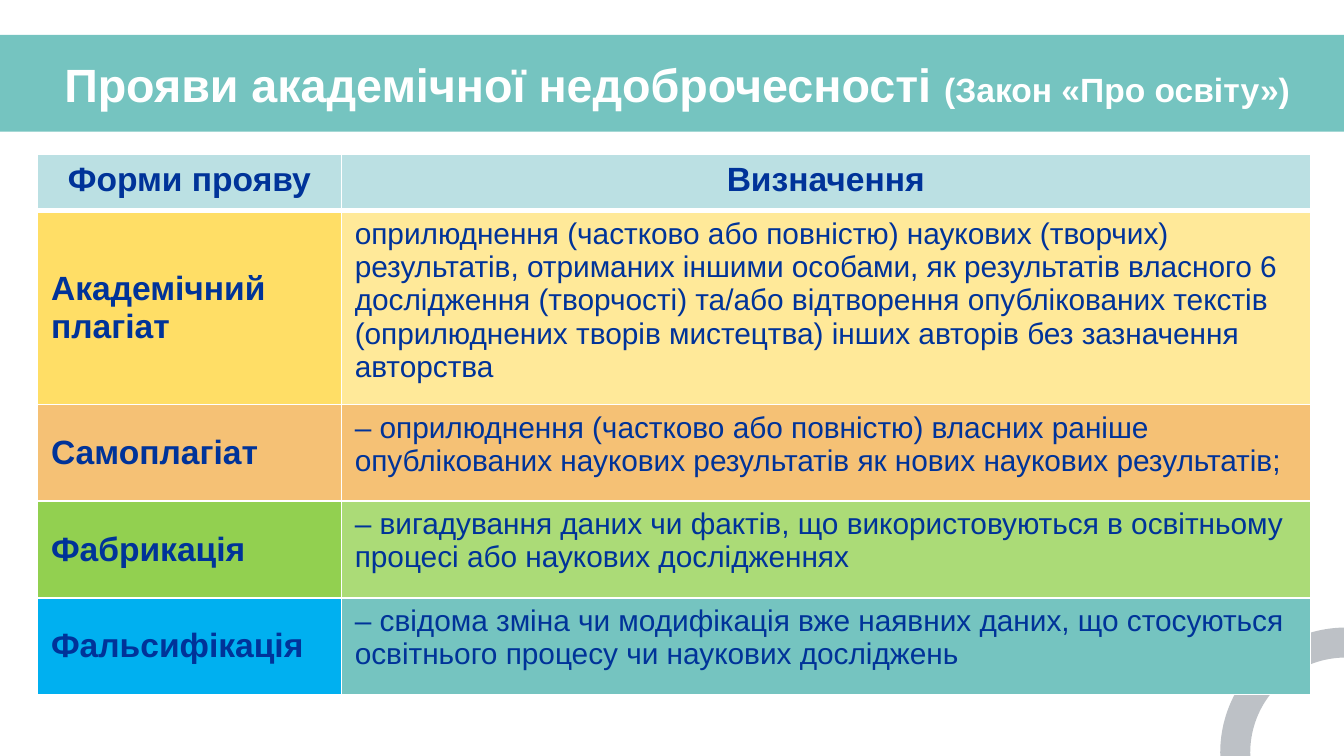
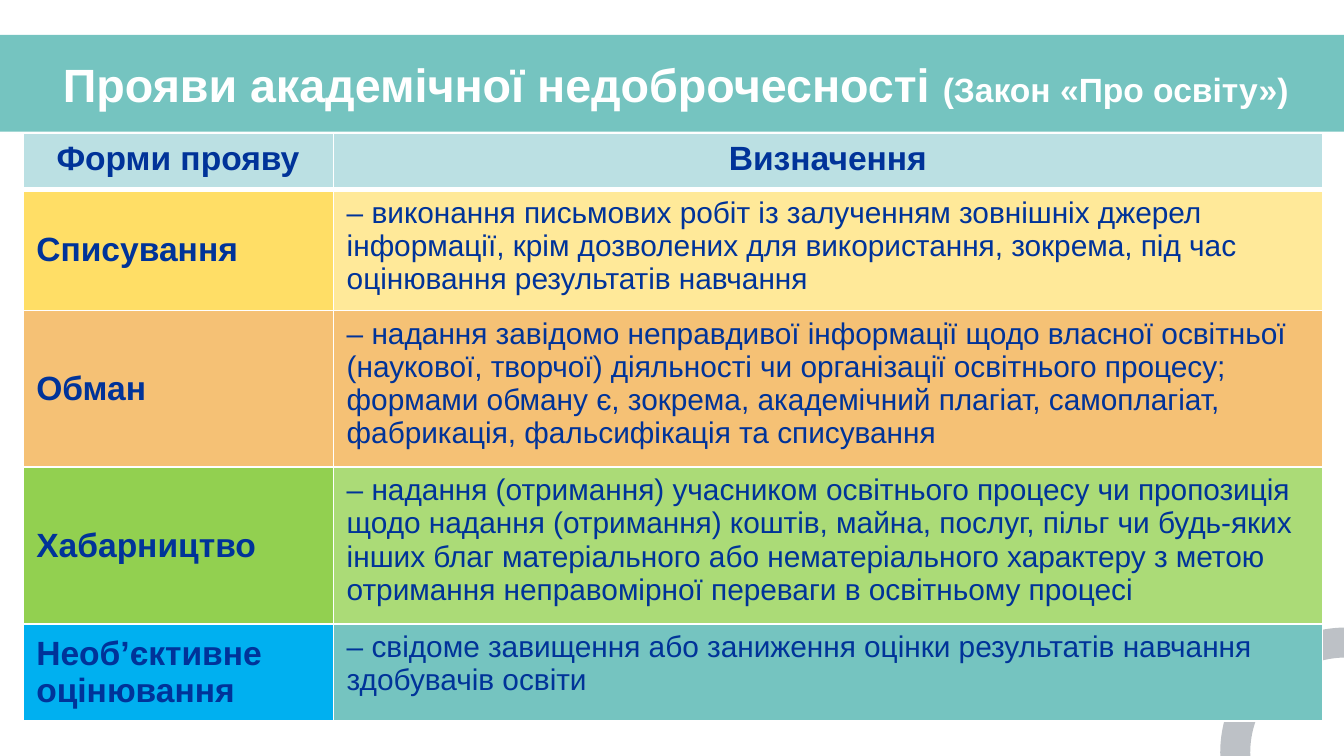
import pptx
import pptx.dml.color
import pptx.enum.shapes
import pptx.enum.text
import pptx.oxml.ns
import pptx.util
from lxml import etree

Pt = pptx.util.Pt
RGBColor = pptx.dml.color.RGBColor
Shape = pptx.enum.shapes.MSO_SHAPE
Anchor = pptx.enum.text.MSO_ANCHOR
Align = pptx.enum.text.PP_ALIGN

WHITE = RGBColor(0xFF, 0xFF, 0xFF)
NAVY = RGBColor(0x00, 0x33, 0x99)
TEAL = RGBColor(0x75, 0xC4, 0xC0)
GREY = RGBColor(0xBD, 0xC1, 0xC6)
PALE_BLUE = RGBColor(0xBB, 0xE0, 0xE3)
YELLOW = RGBColor(0xFF, 0xDE, 0x66)
PALE_YELLOW = RGBColor(0xFF, 0xE9, 0x99)
ORANGE = RGBColor(0xF5, 0xC1, 0x75)
GREEN = RGBColor(0x92, 0xD0, 0x50)
PALE_GREEN = RGBColor(0xAB, 0xDB, 0x77)
BLUE = RGBColor(0x00, 0xB0, 0xF0)

FONT = "Arial"
ROW_FILLS = [(YELLOW, PALE_YELLOW), (ORANGE, ORANGE),
             (GREEN, PALE_GREEN), (BLUE, TEAL)]
HEADINGS = ("Форми прояву", "Визначення")
HEADING_HEIGHT = 30.24
ROW_HEIGHT = 51.84
THIN, THICK = 1, 3

MISCONDUCT = [
    ("Академічний плагіат",
     "оприлюднення (частково або повністю) наукових (творчих) результатів, "
     "отриманих іншими особами, як результатів власного 6 дослідження "
     "(творчості) та/або відтворення опублікованих текстів (оприлюднених "
     "творів мистецтва) інших авторів без зазначення авторства"),
    ("Самоплагіат",
     "– оприлюднення (частково або повністю) власних раніше опублікованих "
     "наукових результатів як нових наукових результатів;"),
    ("Фабрикація",
     "– вигадування даних чи фактів, що використовуються в освітньому "
     "процесі або наукових дослідженнях"),
    ("Фальсифікація",
     "– свідома зміна чи модифікація вже наявних даних, що стосуються "
     "освітнього процесу чи наукових досліджень"),
]
MORE_MISCONDUCT = [
    ("Списування",
     "– виконання письмових робіт із залученням зовнішніх джерел "
     "інформації, крім дозволених для використання, зокрема, під час "
     "оцінювання результатів навчання"),
    ("Обман",
     "– надання завідомо неправдивої інформації щодо власної освітньої "
     "(наукової, творчої) діяльності чи організації освітнього процесу; "
     "формами обману є, зокрема, академічний плагіат, самоплагіат, "
     "фабрикація, фальсифікація та списування"),
    ("Хабарництво",
     "– надання (отримання) учасником освітнього процесу чи пропозиція "
     "щодо надання (отримання) коштів, майна, послуг, пільг чи будь-яких "
     "інших благ матеріального або нематеріального характеру з метою "
     "отримання неправомірної переваги в освітньому процесі"),
    ("Необ’єктивне оцінювання",
     "– свідоме завищення або заниження оцінки результатів навчання "
     "здобувачів освіти"),
]


def add_span(para, text, size, color, bold=True):
    span = para.add_run()
    span.text = text
    span.font.name = FONT
    span.font.size = Pt(size)
    span.font.bold = bold
    span.font.color.rgb = color


def add_plain_shape(page, kind, left, top, width, height, color):
    shape = page.shapes.add_shape(kind, Pt(left), Pt(top), Pt(width), Pt(height))
    shape.shadow.inherit = False
    shape.fill.solid()
    shape.fill.fore_color.rgb = color
    shape.line.fill.background()
    return shape


def add_backdrop(page):
    """Draw the title band and the ring in the lower right corner."""
    add_plain_shape(page, Shape.RECTANGLE, -12.24, 18.72, 744.48, 51.84, TEAL)
    ring = add_plain_shape(page, Shape.BLOCK_ARC, 653.76, 336.24, 134.64, 133.92, GREY)
    for index, value in enumerate((106.77, 163.22, 0.12)):
        ring.adjustments[index] = value


def add_title(page, left, width):
    box = page.shapes.add_textbox(Pt(left), Pt(22.32), Pt(width), Pt(45.36))
    frame = box.text_frame
    frame.word_wrap = True
    frame.vertical_anchor = Anchor.MIDDLE
    frame.margin_left = frame.margin_right = Pt(7.2)
    frame.margin_top = frame.margin_bottom = Pt(7.2)
    para = frame.paragraphs[0]
    add_span(para, "Прояви академічної недоброчесності ", 25, WHITE)
    add_span(para, "(Закон «Про освіту»)", 18, WHITE)


def set_borders(cell, top, bottom):
    """Give a cell white borders; top and bottom are widths in points."""
    properties = cell._tc.get_or_add_tcPr()
    for tag, width in (("a:lnL", THIN), ("a:lnR", THIN), ("a:lnT", top), ("a:lnB", bottom)):
        line = etree.SubElement(properties, pptx.oxml.ns.qn(tag), w=str(Pt(width)))
        fill = etree.SubElement(line, pptx.oxml.ns.qn("a:solidFill"))
        etree.SubElement(fill, pptx.oxml.ns.qn("a:srgbClr"), val=str(WHITE))


def fill_cell(cell, text, color, size=18, bold=True, align=Align.LEFT,
              anchor=Anchor.TOP, top=THIN, bottom=THIN):
    set_borders(cell, top, bottom)
    cell.fill.solid()
    cell.fill.fore_color.rgb = color
    cell.vertical_anchor = anchor
    para = cell.text_frame.paragraphs[0]
    para.alignment = align
    add_span(para, text, size, NAVY, bold)


def add_definitions(page, left, top, widths, first_height, entries):
    heights = [HEADING_HEIGHT, first_height] + [ROW_HEIGHT] * (len(entries) - 1)
    table = page.shapes.add_table(len(heights), len(widths), Pt(left), Pt(top),
                                  Pt(sum(widths)), Pt(sum(heights))).table
    for column, width in zip(table.columns, widths):
        column.width = Pt(width)
    for row, height in zip(table.rows, heights):
        row.height = Pt(height)

    for column, heading in enumerate(HEADINGS):
        fill_cell(table.cell(0, column), heading, PALE_BLUE,
                  align=Align.CENTER, bottom=THICK)
    for row, ((form, definition), fills) in enumerate(zip(entries, ROW_FILLS), 1):
        upper = THICK if row == 1 else THIN
        fill_cell(table.cell(row, 0), form, fills[0], anchor=Anchor.MIDDLE, top=upper)
        fill_cell(table.cell(row, 1), definition, fills[1], size=16, bold=False, top=upper)


def add_page(deck):
    page = deck.slides.add_slide(deck.slide_layouts[6])
    add_backdrop(page)
    return page


def main():
    deck = pptx.Presentation()
    deck.slide_width, deck.slide_height = Pt(720), Pt(405)

    page = add_page(deck)
    add_title(page, 27.36, 677.52)
    add_definitions(page, 20.16, 82.8, (162.72, 519.12), 103.68, MISCONDUCT)

    page = add_page(deck)
    add_title(page, 26.64, 689.04)
    add_definitions(page, 12.24, 71.28, (166.32, 529.92), 58.32, MORE_MISCONDUCT)

    deck.save("out.pptx")


if __name__ == "__main__":
    main()
